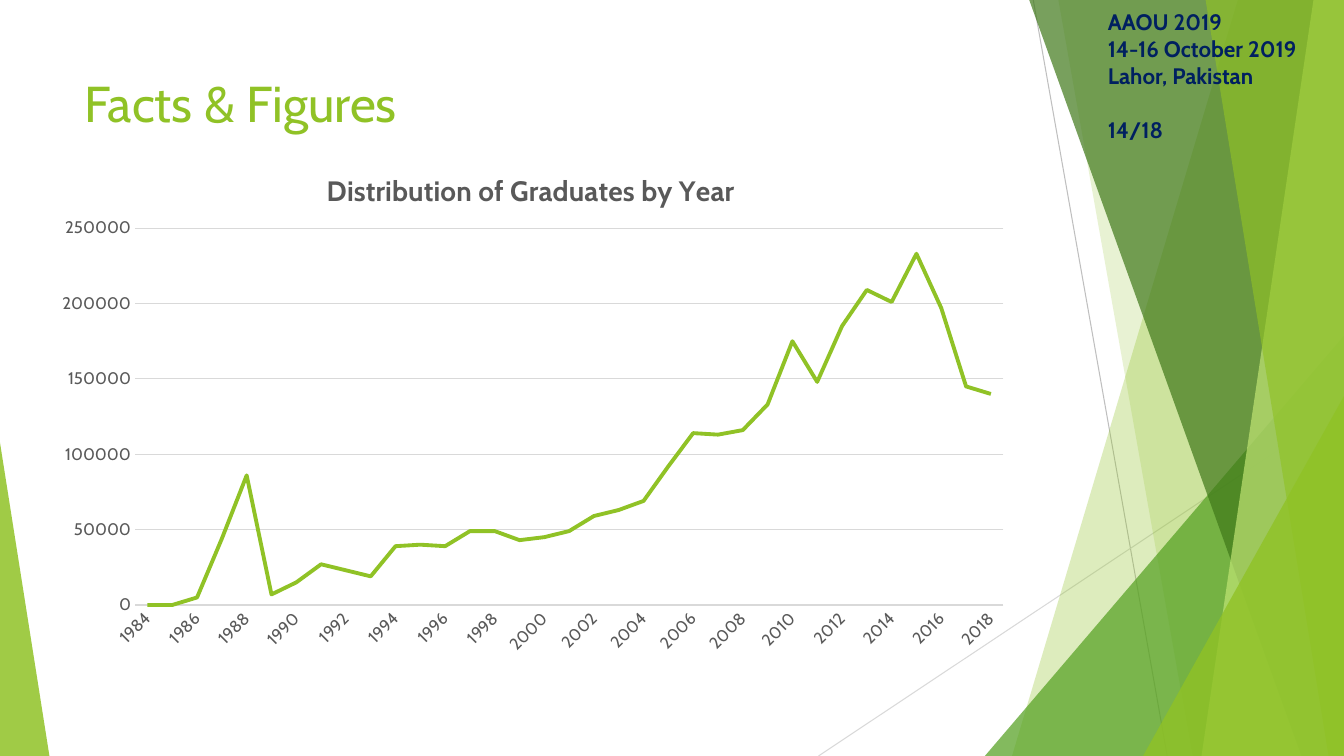
from dataclasses import dataclass
from typing import Any

from lxml import etree
from pptx import Presentation
from pptx import util as u
from pptx.chart.data import CategoryChartData
from pptx.dml.color import RGBColor
from pptx.enum import chart as ch, shapes, text
from pptx.oxml import parse_xml
from pptx.oxml.ns import nsdecls, qn


@dataclass(frozen=True)
class Theme:
    font: str = "Cabin"
    lime: str = "90C226"
    green: str = "54A021"
    forest: str = "3F7819"
    pale: str = "C0E474"
    navy: str = "002060"
    grey: str = "595959"
    rule: str = "D9D9D9"
    dark_rule: str = "BFBFBF"
    title_pt: int = 36
    chart_title_pt: int = 20
    note_pt: int = 16
    axis_pt: int = 12


T = Theme()
prs = Presentation()
prs.slide_width, prs.slide_height = u.Inches(13.33), u.Inches(7.5)


# Lengths are percentages of the slide's width and height
def across(share: float) -> int:
    return round(prs.slide_width * share / 100)


def down(share: float) -> int:
    return round(prs.slide_height * share / 100)


@dataclass(frozen=True)
class Rule:
    x1: float
    y1: float
    x2: float
    y2: float
    color: str


@dataclass(frozen=True)
class Band:
    """Full-height strip from a slanted left edge to the slide's right side."""
    top_x: float
    foot_x: float
    color: str
    alpha: int


@dataclass(frozen=True)
class Wedge:
    """Right triangle standing on the slide's bottom edge."""
    x: float
    y: float
    width: float
    apex: int
    color: str
    alpha: int


@dataclass(frozen=True)
class Box:
    x: float
    y: float
    w: float
    h: float

    def emu(self) -> tuple[int, int, int, int]:
        return across(self.x), down(self.y), across(self.w), down(self.h)


RULES = [Rule(76.88, 0, 86.85, 100, T.dark_rule), Rule(100, 53.73, 60.9, 100, T.rule)]
FACETS: list[Band | Wedge] = [
    Band(92.1, 75.3, T.lime, 30),
    Band(78.75, 88.73, T.lime, 20),
    Wedge(73.28, 44.4, 26.72, 1, T.green, 72),
    Band(76.58, 96.83, T.forest, 70),
    Band(97.73, 89.4, T.pale, 70),
    Band(89.7, 98.85, T.lime, 65),
    Wedge(85.05, 52.4, 14.95, 1, T.lime, 80),
    Wedge(0, 58.53, 3.68, 0, T.lime, 85),
]
TITLE_BOX = Box(5.55, 8.93, 70.5, 19.2)
CHART_BOX = Box(3.15, 18.4, 72.92, 69.73)
NOTE_BOX = Box(81.7, 1.6, 18.3, 16.8)
PLOT_BOX = Box(9.46, 16.9, 88.6, 71.5)  # percentages of the chart

GRADUATES = [
    0, 0, 5000, 44000, 86000, 7000, 15000, 27000, 23000, 19000, 39000, 40000,
    39000, 49000, 49000, 43000, 45000, 49000, 59000, 63000, 69000, 92000,
    114000, 113000, 116000, 133000, 175000, 148000, 185000, 209000, 201000,
    233000, 197000, 145000, 140000,
]


def assign(obj: Any, fmt: dict[str, Any]) -> None:
    for name, value in fmt.items():
        setattr(obj, name, value)


def style_font(font: Any, size: int, color: str, bold: bool = False) -> None:
    assign(font, {"name": T.font, "size": u.Pt(size), "bold": bold})
    font.color.rgb = RGBColor.from_string(color)


def style_line(line: Any, color: str, width: float) -> None:
    line.color.rgb = RGBColor.from_string(color)
    line.width = u.Pt(width)


def draw_rule(s: Any, rule: Rule) -> None:
    sp = s.shapes.add_connector(
        shapes.MSO_CONNECTOR.STRAIGHT,
        across(rule.x1), down(rule.y1), across(rule.x2), down(rule.y2))
    style_line(sp.line, rule.color, 0.75)
    etree.SubElement(sp._element.spPr, qn("a:effectLst"))


def draw_facet(s: Any, facet: Band | Wedge) -> None:
    if isinstance(facet, Band):
        fb = s.shapes.build_freeform(across(facet.top_x), 0)
        fb.add_line_segments([(across(100), 0), (across(100), down(100)),
                              (across(facet.foot_x), down(100))])
        sp = fb.convert_to_shape()
    else:
        box = Box(facet.x, facet.y, facet.width, 100 - facet.y)
        sp = s.shapes.add_shape(shapes.MSO_SHAPE.ISOSCELES_TRIANGLE, *box.emu())
        sp.adjustments[0] = facet.apex
    sp.shadow.inherit = False
    sp.line.fill.background()
    sp.fill.solid()
    sp.fill.fore_color.rgb = RGBColor.from_string(facet.color)
    color = sp._element.spPr.find(qn("a:solidFill"))[0]
    etree.SubElement(color, qn("a:alpha"), val=str(facet.alpha * 1000))


def add_text(s: Any, box: Box, lines: list[str], size: int, color: str,
             anchor: Any, bold: bool = False) -> Any:
    tf = s.shapes.add_textbox(*box.emu()).text_frame
    assign(tf, {"word_wrap": True, "vertical_anchor": anchor})
    for i, line in enumerate(lines):
        p = tf.add_paragraph() if i else tf.paragraphs[0]
        r = p.add_run()
        r.text = line
        style_font(r.font, size, color, bold)
    return tf


def manual_layout(tag: str, **shares: float) -> Any:
    parts = [("layoutTarget", "inner")] if "w" in shares else []
    parts += [("xMode", "edge"), ("yMode", "edge")]
    parts += [(name, str(round(share / 100, 4))) for name, share in shares.items()]
    body = "".join(f'<c:{name} val="{val}"/>' for name, val in parts)
    return parse_xml(f'<c:{tag} {nsdecls("c")}><c:manualLayout>{body}'
                     f'</c:manualLayout></c:{tag}>')


def add_graduates_chart(s: Any) -> None:
    data = CategoryChartData()
    data.categories = [str(1984 + i) for i in range(len(GRADUATES))]
    data.add_series("Series 1", GRADUATES)
    chart = s.shapes.add_chart(ch.XL_CHART_TYPE.LINE, *CHART_BOX.emu(), data).chart
    assign(chart, {"has_legend": False, "has_title": True})
    style_font(chart.font, T.axis_pt, T.grey)

    # Chart title and plot position
    tf = chart.chart_title.text_frame
    tf.text = "Distribution of Graduates by Year"
    style_font(tf.paragraphs[0].runs[0].font, T.chart_title_pt, T.grey, True)
    title = chart.chart_title._element
    for old in title.findall(qn("c:layout")):
        title.remove(old)
    title.find(qn("c:tx")).addnext(manual_layout("layout", x=28.5, y=5))
    area = chart._chartSpace.chart.plotArea
    for old in area.findall(qn("c:layout")):
        area.remove(old)
    area.insert(0, manual_layout("layout", x=PLOT_BOX.x, y=PLOT_BOX.y,
                                 w=PLOT_BOX.w, h=PLOT_BOX.h))

    # Axes
    years, counts = chart.category_axis, chart.value_axis
    for axis in (years, counts):
        assign(axis, {"major_tick_mark": ch.XL_TICK_MARK.NONE,
                      "minor_tick_mark": ch.XL_TICK_MARK.NONE})
        style_font(axis.tick_labels.font, T.axis_pt, T.grey)
    style_line(years.format.line, T.rule, 1)
    years._element.find(qn("c:txPr")).find(qn("a:bodyPr")).set("rot", "-2700000")
    assign(counts, {"minimum_scale": 0, "maximum_scale": 250000, "major_unit": 50000,
                    "has_major_gridlines": True})
    counts.format.line.fill.background()
    style_line(counts.major_gridlines.format.line, T.rule, 0.75)

    # Series
    chart.plots[0].vary_by_categories = False
    series = chart.plots[0].series[0]
    series.smooth = False
    series.marker.style = ch.XL_MARKER_STYLE.NONE
    style_line(series.format.line, T.lime, 2.75)


def main() -> None:
    s = prs.slides.add_slide(prs.slide_layouts[6])
    for rule in RULES:
        draw_rule(s, rule)
    for facet in FACETS:
        draw_facet(s, facet)
    add_text(s, TITLE_BOX, ["Facts & Figures"], T.title_pt, T.lime, text.MSO_ANCHOR.TOP)
    add_graduates_chart(s)
    tf = add_text(s, NOTE_BOX,
                  ["AAOU 2019", "14-16 October 2019 Lahor, Pakistan", "14/18"],
                  T.note_pt, T.navy, text.MSO_ANCHOR.MIDDLE, bold=True)
    tf.paragraphs[-1].space_before = u.Pt(19.4)
    prs.save("out.pptx")


if __name__ == "__main__":
    main()
